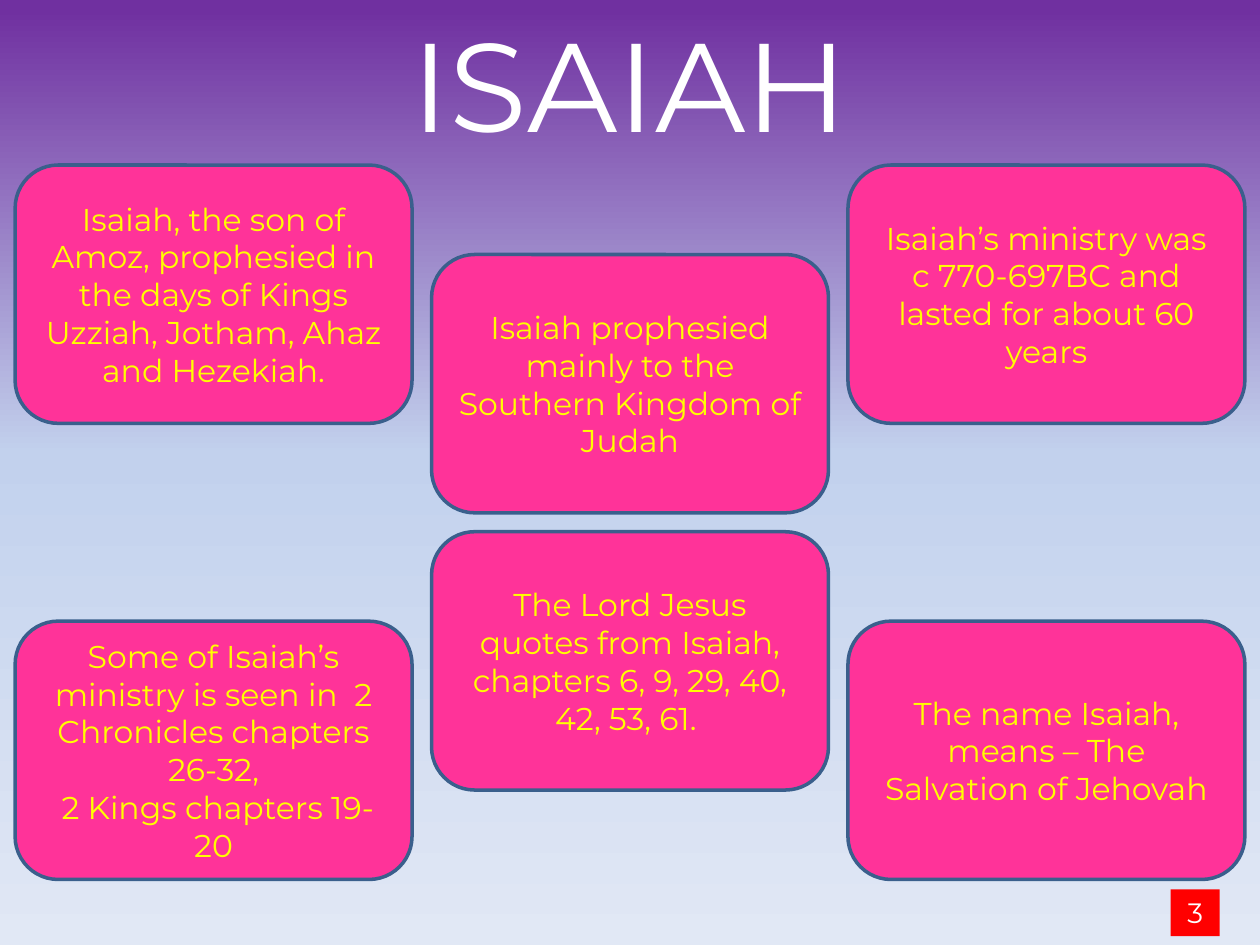
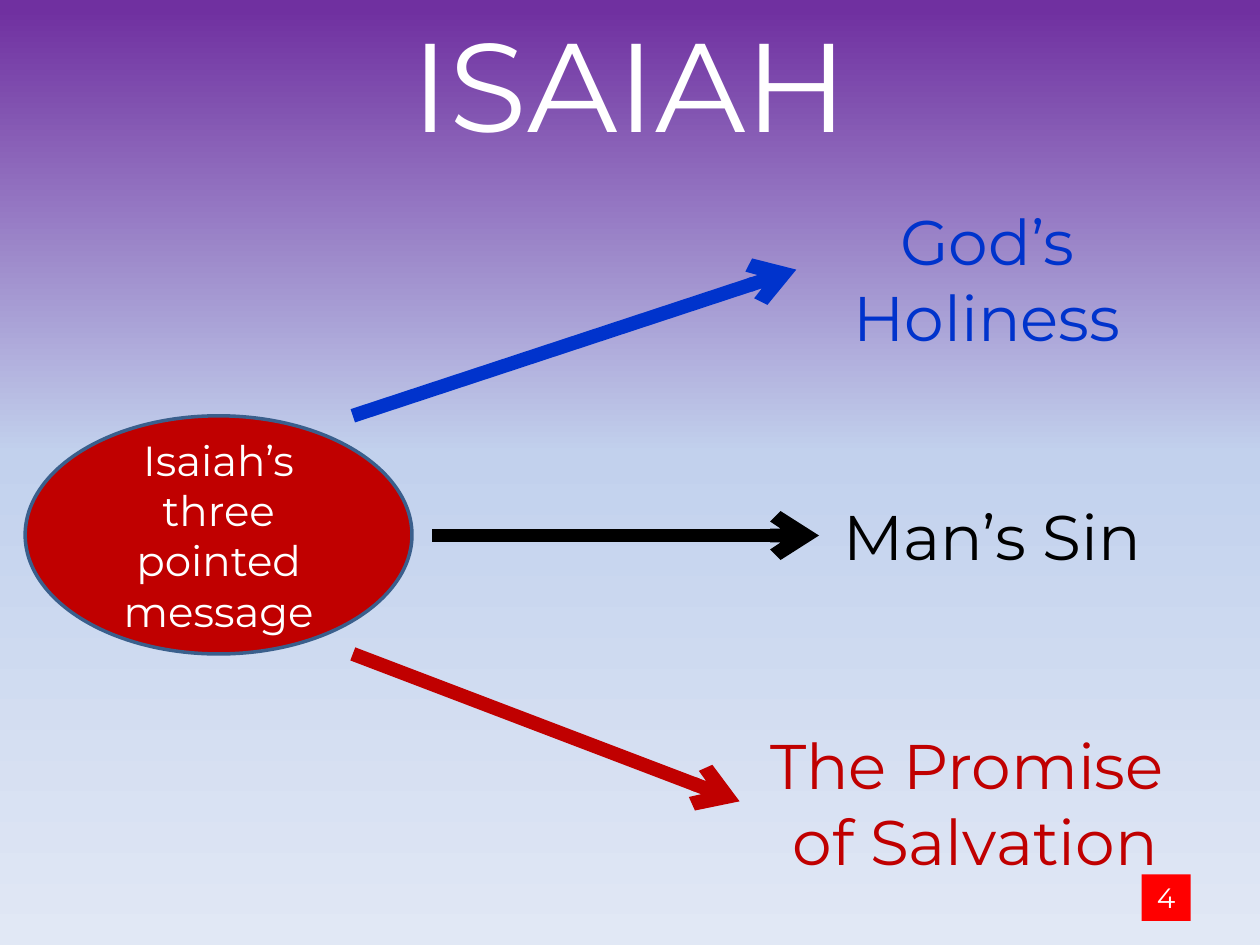
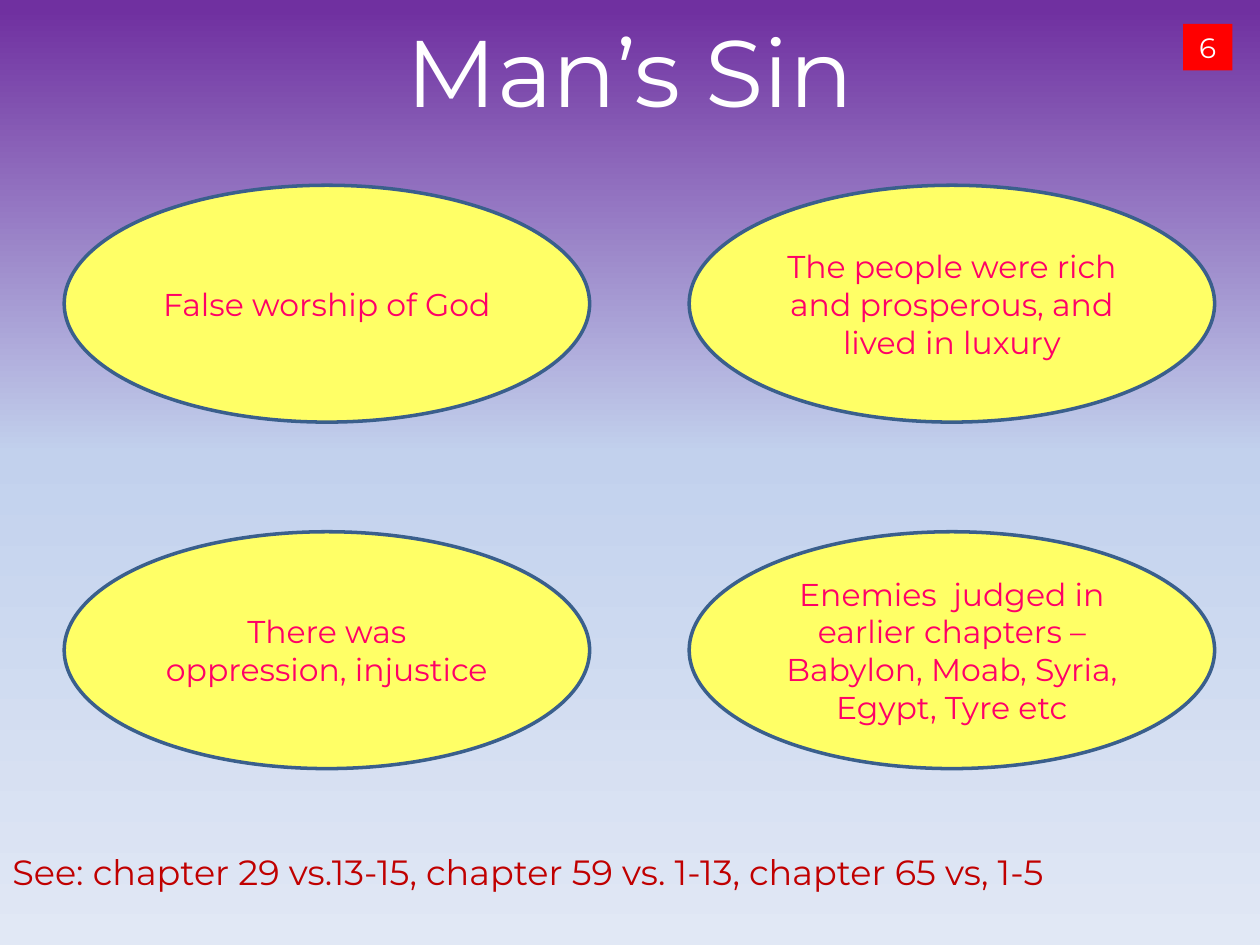
from copy import deepcopy
from lxml.etree import SubElement
from pptx import Presentation
from pptx.dml.color import RGBColor
from pptx.enum.shapes import MSO_CONNECTOR, MSO_SHAPE
from pptx.enum.text import MSO_ANCHOR, MSO_AUTO_SIZE, PP_ALIGN
from pptx.oxml.ns import qn
from pptx.util import Inches, Pt

FONT = "Montserrat"
COLS, ROWS = 100, 75
HUES = {
    "top": "7030A0", "mid": "C2D1ED", "low": "E1E8F5",
    "white": "FFFFFF", "black": "000000", "edge": "3A5F8C",
    "pink": "FF3399", "yellow": "FFFF00", "lemon": "FFFF66",
    "rose": "FF0066", "blue": "0033CC", "brick": "C00000", "red": "FF0000",
}
FADE = ((0.01, "top"), (0.48, "mid"), (1, "low"))


def hue(name):
    return RGBColor.from_string(HUES[name])


class Deck:
    """Style and current slide; lengths are columns and rows of the grid."""

    def __init__(self):
        self.prs = Presentation()
        self.prs.slide_width, self.prs.slide_height = Inches(10), Inches(7.5)
        self.slide = None

    def x(self, cols):
        return round(self.prs.slide_width * cols / COLS)

    def y(self, rows):
        return round(self.prs.slide_height * rows / ROWS)

    def area(self, col, row, wide, high):
        return self.x(col), self.y(row), self.x(wide), self.y(high)

    def page(self):
        self.slide = self.prs.slides.add_slide(self.prs.slide_layouts[6])
        fill = self.slide.background.fill
        fill.gradient()
        fill.gradient_angle = 270
        stops = self.slide.element.find(".//" + qn("a:gsLst"))
        stops.append(deepcopy(stops[0]))
        for stop, (spot, name) in zip(fill.gradient_stops, FADE):
            stop.position = spot
            stop.color.rgb = hue(name)

    def fill_in(self, shape, lines, size, ink, align=PP_ALIGN.CENTER):
        """Put lines of styled text into a shape and return its frame."""
        frame = shape.text_frame
        frame.word_wrap = True
        for i, line in enumerate(lines):
            para = frame.paragraphs[0] if i == 0 else frame.add_paragraph()
            para.alignment = align
            run = para.add_run()
            run.text = line
            run.font.name, run.font.size = FONT, Pt(size)
            run.font.color.rgb = hue(ink)
        return frame

    def text(self, place, lines, size, ink, align=PP_ALIGN.CENTER):
        box = self.slide.shapes.add_textbox(*self.area(*place))
        frame = self.fill_in(box, lines, size, ink, align)
        frame.auto_size = MSO_AUTO_SIZE.SHAPE_TO_FIT_TEXT

    def title(self, words, size=72, row=0, high=13.1):
        self.text((0, row, COLS, high), [words], size, "white")

    def shape(self, kind, place, fill, lines, size, ink, edge="edge"):
        item = self.slide.shapes.add_shape(kind, *self.area(*place))
        item.shadow.inherit = False
        item.fill.solid()
        item.fill.fore_color.rgb = hue(fill)
        if edge:
            item.line.color.rgb = hue(edge)
            item.line.width = Pt(2)
        else:
            item.line.fill.background()
        frame = self.fill_in(item, lines, size, ink)
        frame.vertical_anchor = MSO_ANCHOR.MIDDLE
        return frame

    def badge(self, col, row, num):
        """Page number on a small red square."""
        frame = self.shape(MSO_SHAPE.RECTANGLE, (col, row, 3.9, 3.7), "red",
                           [num], 16, "white", edge=None)
        frame.word_wrap = False
        frame.vertical_anchor = MSO_ANCHOR.TOP

    def arrow(self, start, end, ink):
        line = self.slide.shapes.add_connector(
            MSO_CONNECTOR.STRAIGHT, self.x(start[0]), self.y(start[1]),
            self.x(end[0]), self.y(end[1]))
        line.line.color.rgb = hue(ink)
        line.line.width = Pt(8)
        props = line.element.spPr
        SubElement(props.find(qn("a:ln")), qn("a:tailEnd"), type="arrow")
        SubElement(props, qn("a:effectLst"))


def facts(deck):
    deck.page()
    deck.title("ISAIAH")
    cards = (
        (0, 13.1, ["Isaiah, the son of Amoz, prophesied in the days of Kings "
                   "Uzziah, Jotham, Ahaz and Hezekiah."]),
        (2, 49.3, ["The name Isaiah, means – The Salvation of Jehovah"]),
        (0, 49.3, ["Some of Isaiah’s ministry is seen in  2 Chronicles "
                   "chapters 26-32,", " 2 Kings chapters 19-20"]),
        (2, 13.1, ["Isaiah’s ministry was c 770-697BC and lasted for about "
                   "60 years"]),
        (1, 20.2, ["Isaiah prophesied mainly to the Southern Kingdom of "
                   "Judah"]),
        (1, 42.2, ["The Lord Jesus quotes from Isaiah, chapters 6, 9, 29, "
                   "40, 42, 53, 61. "]),
    )
    for col, row, lines in cards:
        deck.shape(MSO_SHAPE.ROUNDED_RECTANGLE,
                   (1.2 + 33.05 * col, row, 31.5, 20.5),
                   "pink", lines, 18, "yellow")
    deck.badge(92.9, 70.6, "3")


def points(deck):
    deck.page()
    deck.title("ISAIAH")
    deck.shape(MSO_SHAPE.OVAL, (2, 33, 30.7, 18.9), "brick",
               ["Isaiah’s three pointed message"], 24, "white")
    themes = (
        ((63.4, 39, 30.7, 7.1), ["Man’s Sin"], "black",
         (34.3, 42.5), (65, 42.5)),
        ((64.2, 15.6, 28.3, 13.1), ["God’s Holiness"], "blue",
         (28, 33), (63.2, 21.4)),
        ((57.3, 57.2, 40.2, 13.1), ["The Promise ", "of Salvation"], "brick",
         (28, 51.9), (58.7, 63.6)),
    )
    for place, lines, ink, start, end in themes:
        deck.text(place, lines, 36, ink)
        deck.arrow(start, end, ink)
    deck.badge(90.6, 69.4, "4")


def sins(deck):
    deck.page()
    deck.title("Man’s Sin", 54, 0.5, 10.1)
    deck.text((0, 67, COLS, 4.4),
              ["See: chapter 29 vs.13-15, chapter 59 vs. 1-13, "
               "chapter 65 vs, 1-5"], 20, "brick", PP_ALIGN.LEFT)
    charges = (
        "False worship of God",
        "The people were rich and prosperous, and lived in luxury",
        "There was oppression, injustice",
        "Enemies  judged in earlier chapters – Babylon, Moab, Syria, "
        "Egypt, Tyre etc",
    )
    for i, words in enumerate(charges):
        row, col = divmod(i, 2)
        deck.shape(MSO_SHAPE.OVAL,
                   (5.1 + 49.6 * col, 14.7 + 27.5 * row, 41.7, 18.8),
                   "lemon", [words], 18, "rose")
    deck.badge(93.9, 1.9, "6")


def main():
    deck = Deck()
    for build in (facts, points, sins):
        build(deck)
    deck.prs.save("out.pptx")


if __name__ == "__main__":
    main()
